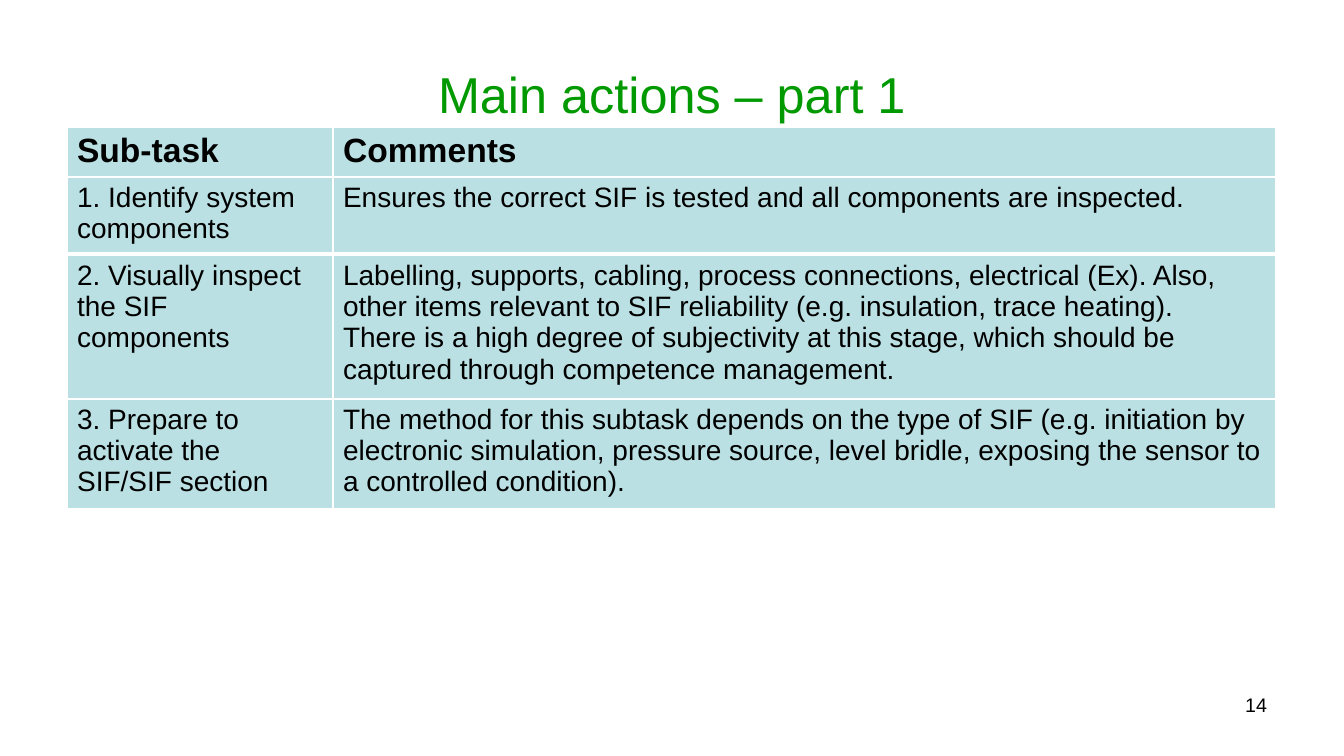
"""Build the "Main actions – part 1" slide with its stacked sub-task tables."""
import pptx
import pptx.dml.color
import pptx.enum.text
import pptx.oxml
import pptx.oxml.ns
import pptx.util

PX = 9144000 / 1008
THEME = {
    "font": "Arial",
    "title": "009900",
    "text": "000000",
    "cell": "BBE0E3",
    "border": "FFFFFF",
    "title_size": 36,
    "header_size": 24,
    "body_size": 20,
    "number_size": 14,
}
ALIGN = pptx.enum.text.PP_ALIGN
ANCHOR = pptx.enum.text.MSO_ANCHOR


def px(*lengths):
    """Turn pixel lengths into EMU."""
    return [pptx.util.Emu(round(length * PX)) for length in lengths]


def write_text(frame, text, size, color=THEME["text"], bold=False, align=ALIGN.LEFT):
    """Fill a text frame, one paragraph for each line of the text."""
    frame.word_wrap = True
    frame.text = text
    for paragraph in frame.paragraphs:
        paragraph.alignment = align
        for run in paragraph.runs:
            run.font.name = THEME["font"]
            run.font.size = pptx.util.Pt(size)
            run.font.bold = bold
            run.font.color.rgb = pptx.dml.color.RGBColor.from_string(color)


presentation = pptx.Presentation()
presentation.slide_width, presentation.slide_height = px(1344, 756)
slide = presentation.slides.add_slide(presentation.slide_layouts[5])

title = slide.shapes.title
title.left, title.top, title.width, title.height = px(67, 30, 1210, 126)
title.text_frame.vertical_anchor = ANCHOR.MIDDLE
write_text(title.text_frame, "Main actions – part 1", THEME["title_size"],
           color=THEME["title"], align=ALIGN.CENTER)

number = slide.shapes.add_textbox(*px(963, 688, 314, 52))
write_text(number.text_frame, "14", THEME["number_size"], align=ALIGN.RIGHT)

sub_tasks = [
    (50, "Sub-task", "Comments"),
    (78, "1. Identify system components",
     "Ensures the correct SIF is tested and all components are inspected."),
    (144, "2. Visually inspect the SIF components",
     "Labelling, supports, cabling, process connections, electrical (Ex). Also, "
     "other items relevant to SIF reliability (e.g. insulation, trace heating).\n"
     "There is a high degree of subjectivity at this stage, which should be "
     "captured through competence management."),
    (111, "3. Prepare to activate the SIF/SIF section",
     "The method for this subtask depends on the type of SIF (e.g. initiation by "
     "electronic simulation, pressure source, level bridle, exposing the sensor to "
     "a controlled condition)."),
]
column_widths = px(266, 943)
border_widths = {"lnL": 1, "lnR": 1, "lnT": 1, "lnB": 3}

top = 127
for index, (height, *texts) in enumerate(sub_tasks):
    is_header = index == 0
    table_frame = slide.shapes.add_table(1, 2, *px(67, top, 1209, height))
    table = table_frame.table
    table.first_row = False
    table.horz_banding = False
    table.rows[0].height = px(41)[0]
    table_frame.height = px(height)[0]
    for column, width, cell, text in zip(table.columns, column_widths,
                                         table.rows[0].cells, texts):
        column.width = width
        properties = cell._tc.get_or_add_tcPr()
        for side, points in border_widths.items():
            properties.append(pptx.oxml.parse_xml(
                f'<a:{side} {pptx.oxml.ns.nsdecls("a")} w="{pptx.util.Pt(points)}">'
                f'<a:solidFill><a:srgbClr val="{THEME["border"]}"/></a:solidFill>'
                f'</a:{side}>'))
        cell.fill.solid()
        cell.fill.fore_color.rgb = pptx.dml.color.RGBColor.from_string(THEME["cell"])
        write_text(cell.text_frame, text,
                   THEME["header_size" if is_header else "body_size"], bold=is_header)
    top += height

presentation.save("out.pptx")
